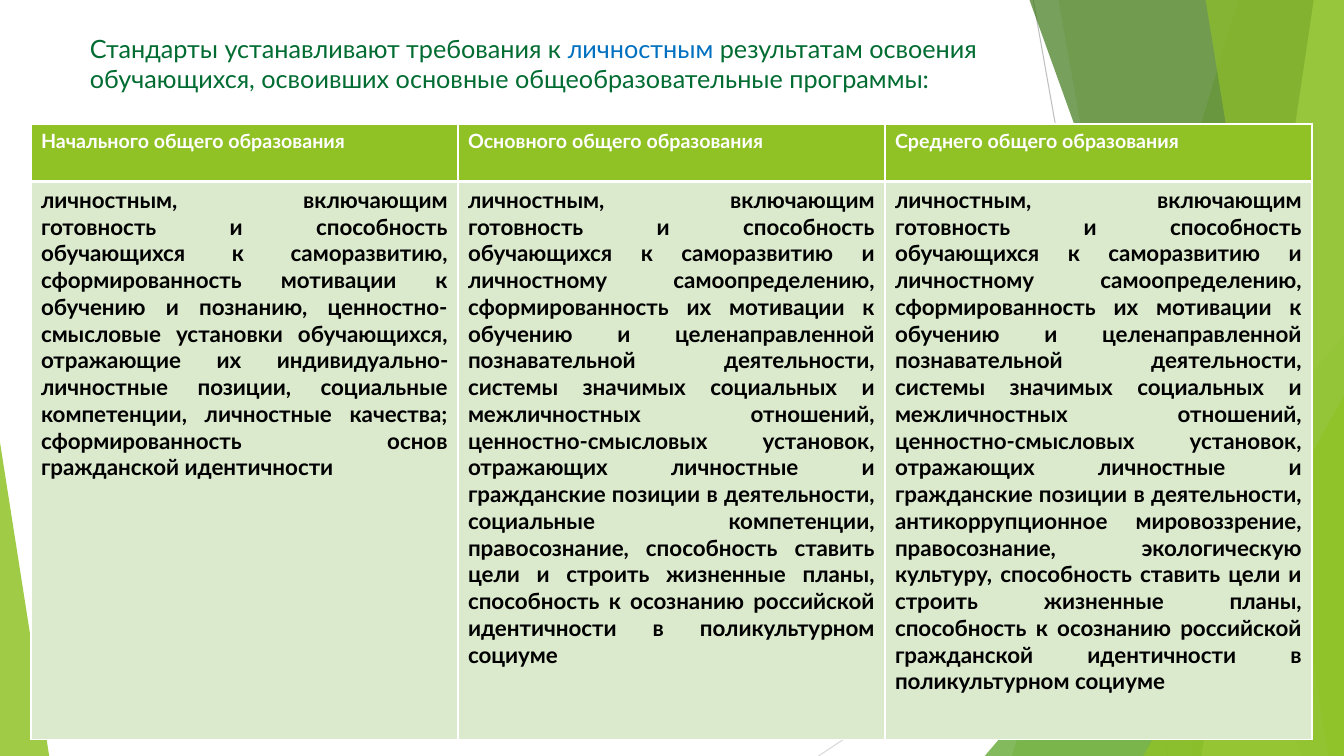
from typing import NamedTuple

from pptx import Presentation, util as u
from pptx.dml.color import RGBColor
from pptx.enum import shapes, text
from pptx.oxml import parse_xml
from pptx.oxml.ns import nsdecls

WIDE, HIGH = u.Inches(13.33), u.Inches(7.5)
FONT = "Lato"
HEX = {
    "lime": "90C226", "leaf": "54A021", "moss": "3F7819", "pale": "C0E474",
    "mint": "DBE9CD", "pine": "006C31", "blue": "0070C0", "white": "FFFFFF",
    "black": "000000", "grey": "BFBFBF", "mist": "D9D9D9",
}


class Ray(NamedTuple):
    """A thin line; all lengths are percent of the slide's size."""
    x1: float
    y1: float
    x2: float
    y2: float
    color: str


class Band(NamedTuple):
    """A full-height panel from a slanted left edge to the right side."""
    top: float
    foot: float
    color: str
    alpha: int


class Wedge(NamedTuple):
    """A right triangle on the bottom edge; tip 1 is right, 0 is left."""
    left: float
    top: float
    width: float
    tip: int
    color: str
    alpha: int


class Level(NamedTuple):
    head: str
    body: str


RAYS = [Ray(76.88, 0, 86.88, 100, "grey"), Ray(100, 53.75, 60.9, 100, "mist")]
PANELS = [
    Band(92.12, 75.3, "lime", 30),
    Band(78.75, 88.75, "lime", 20),
    Wedge(73.27, 44.4, 26.73, 1, "leaf", 72),
    Band(76.6, 96.85, "moss", 70),
    Band(97.75, 89.4, "pale", 70),
    Band(89.7, 98.87, "lime", 65),
    Wedge(85.07, 52.4, 14.93, 1, "lime", 80),
    Wedge(0, 58.53, 3.66, 0, "lime", 85),
]
TITLE = [
    ("Стандарты устанавливают требования к ", "pine"),
    ("личностным ", "blue"),
    ("результатам освоения обучающихся, освоивших основные "
     "общеобразовательные программы:", "pine"),
]
START = "личностным, включающим готовность и способность обучающихся к саморазвитию"
SHARED = (
    START + " и личностному самоопределению, сформированность их мотивации к "
    "обучению и целенаправленной познавательной деятельности, системы значимых "
    "социальных и межличностных отношений, ценностно-смысловых установок, "
    "отражающих личностные и гражданские позиции в деятельности, "
)
PLANS = ("способность ставить цели и строить жизненные планы, "
         "способность к осознанию российской ")
LEVELS = [
    Level("Начального общего образования",
          START + ", сформированность мотивации к обучению и познанию, "
          "ценностно-смысловые установки обучающихся, отражающие их "
          "индивидуально-личностные позиции, социальные компетенции, личностные "
          "качества; сформированность основ гражданской идентичности"),
    Level("Основного общего образования",
          SHARED + "социальные компетенции, правосознание, " + PLANS
          + "идентичности в поликультурном социуме"),
    Level("Среднего общего образования",
          SHARED + "антикоррупционное мировоззрение, правосознание, "
          "экологическую культуру, " + PLANS
          + "гражданской идентичности в поликультурном социуме"),
]


def across(share: float) -> int:
    return round(WIDE * share / 100)


def down(share: float) -> int:
    return round(HIGH * share / 100)


def tint(name: str) -> RGBColor:
    return RGBColor.from_string(HEX[name])


def write(frame, parts, *, size, bold=False, align=text.PP_ALIGN.LEFT):
    """Fill one paragraph with (words, colour) runs."""
    line = frame.paragraphs[0]
    line.alignment = align
    for words, color in parts:
        run = line.add_run()
        run.text = words
        run.font.name, run.font.size, run.font.bold = FONT, u.Pt(size), bold
        run.font.color.rgb = tint(color)


def draw_ray(slide, ray: Ray) -> None:
    line = slide.shapes.add_connector(
        shapes.MSO_CONNECTOR.STRAIGHT, across(ray.x1), down(ray.y1),
        across(ray.x2), down(ray.y2))
    line.line.color.rgb = tint(ray.color)
    line.line.width = u.Pt(0.75)
    line._element.spPr.append(parse_xml(f"<a:effectLst {nsdecls('a')}/>"))


def draw_panel(slide, item: Band | Wedge) -> None:
    if isinstance(item, Band):
        path = slide.shapes.build_freeform(across(item.top), 0, scale=1.0)
        path.add_line_segments(
            [(WIDE, 0), (WIDE, HIGH), (across(item.foot), HIGH)], close=True)
        shape = path.convert_to_shape()
    else:
        shape = slide.shapes.add_shape(
            shapes.MSO_SHAPE.ISOSCELES_TRIANGLE, across(item.left),
            down(item.top), across(item.width), down(100 - item.top))
        shape.adjustments[0] = item.tip
    shape.shadow.inherit = False
    shape.line.fill.background()
    shape.fill.solid()
    shape.fill.fore_color.rgb = tint(item.color)
    color = shape._element.spPr.xpath("./a:solidFill/a:srgbClr")[0]
    color.append(parse_xml(f'<a:alpha {nsdecls("a")} val="{item.alpha * 1000}"/>'))


def edge(cell, **widths: float) -> None:
    """Give a cell white borders, widths in points by side: L, R, T, B."""
    props = cell._tc.get_or_add_tcPr()
    for spot, (side, width) in enumerate(widths.items()):
        props.insert(spot, parse_xml(
            f'<a:ln{side} {nsdecls("a")} w="{u.Pt(width)}"><a:solidFill>'
            f'<a:srgbClr val="{HEX["white"]}"/></a:solidFill></a:ln{side}>'))


def fill_cell(cell, words: str, back: str, ink: str, **style) -> None:
    cell.fill.solid()
    cell.fill.fore_color.rgb = tint(back)
    write(cell.text_frame, [(words, ink)], bold=True, **style)


def draw_title(slide) -> None:
    title = slide.shapes.title
    title.left, title.top = across(5.93), down(3.73)
    title.width, title.height = across(70.14), down(9.6)
    frame = title.text_frame
    frame.word_wrap = True
    frame.auto_size = text.MSO_AUTO_SIZE.NONE
    frame.vertical_anchor = text.MSO_ANCHOR.TOP
    write(frame, TITLE, size=18)


def draw_table(slide) -> None:
    rows = (7.6, 73.8)
    table = slide.shapes.add_table(
        2, len(LEVELS), across(2.3), down(16.4), across(95.32),
        down(sum(rows))).table
    for row, share in zip(table.rows, rows):
        row.height = down(share)
    for col, level in enumerate(LEVELS):
        head, body = table.cell(0, col), table.cell(1, col)
        fill_cell(head, level.head, "lime", "white", size=14)
        fill_cell(body, level.body, "mint", "black", size=16,
                  align=text.PP_ALIGN.JUSTIFY)
        edge(head, L=1, R=1, T=1, B=3)
        edge(body, L=1, R=1, T=3, B=1)


def main() -> None:
    deck = Presentation()
    deck.slide_width, deck.slide_height = WIDE, HIGH
    slide = deck.slides.add_slide(deck.slide_layouts.get_by_name("Title Only"))
    for ray in RAYS:
        draw_ray(slide, ray)
    for item in PANELS:
        draw_panel(slide, item)
    draw_title(slide)
    draw_table(slide)
    deck.save("out.pptx")


if __name__ == "__main__":
    main()
